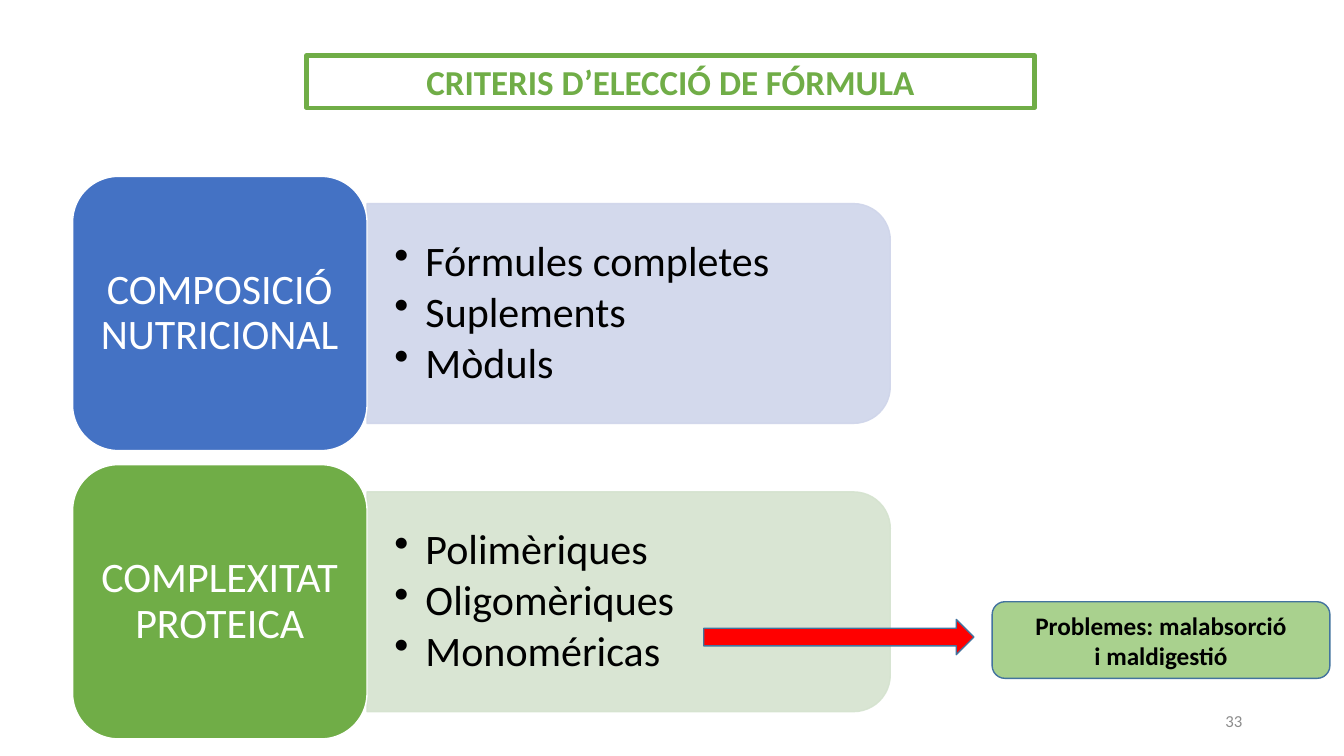
import dataclasses

import lxml.etree
import pptx
import pptx.dml.color
import pptx.enum.shapes
import pptx.enum.text
import pptx.oxml.ns
import pptx.util

Inches = pptx.util.Inches
Pt = pptx.util.Pt
SHAPES = pptx.enum.shapes.MSO_SHAPE
ALIGN = pptx.enum.text.PP_ALIGN
ANCHOR = pptx.enum.text.MSO_ANCHOR


@dataclasses.dataclass(frozen=True)
class Theme:
    font: str = "Calibri"
    blue: str = "4472C4"
    pale_blue: str = "CFD5EA"
    green: str = "70AD47"
    pale_green: str = "D5E3CF"
    callout: str = "A9D18E"
    red: str = "FF0000"
    outline: str = "43739E"
    white: str = "FFFFFF"
    black: str = "000000"
    grey: str = "8C8C8C"
    title_size: int = 25
    body_size: int = 30
    callout_size: int = 18
    number_size: int = 12


THEME = Theme()


def rgb(value):
    return pptx.dml.color.RGBColor.from_string(value)


def apply_format(target, values):
    for name, value in values.items():
        setattr(target, name, value)


def write_text(shape, lines, size, color, bold=False, inset=(0.1, 0.05),
               anchor=ANCHOR.MIDDLE, **para_format):
    frame = shape.text_frame
    side, end = (Inches(value) for value in inset)
    apply_format(frame, {
        "word_wrap": True, "auto_size": pptx.enum.text.MSO_AUTO_SIZE.NONE,
        "vertical_anchor": anchor, "margin_left": side, "margin_right": side,
        "margin_top": end, "margin_bottom": end})
    frame.text = "\n".join(lines)
    for para in frame.paragraphs:
        apply_format(para, para_format)
        for span in para.runs:
            apply_format(span.font, {"name": THEME.font, "size": Pt(size), "bold": bold})
            span.font.color.rgb = rgb(color)


def add_box(page, kind, box, fill, line):
    shape = page.shapes.add_shape(kind, *(Inches(value) for value in box))
    shape.shadow.inherit = False
    shape.fill.solid()
    shape.fill.fore_color.rgb = rgb(fill)
    shape.line.color.rgb = rgb(line)
    shape.line.width = Pt(1)
    return shape


def add_text_box(page, box):
    return page.shapes.add_textbox(*(Inches(value) for value in box))


def set_opacity(shape, percent):
    for color in shape.element.spPr.iter(pptx.oxml.ns.qn("a:srgbClr")):
        alpha = lxml.etree.SubElement(color, pptx.oxml.ns.qn("a:alpha"))
        alpha.set("val", str(percent * 1000))


def add_bullets(shape, indent):
    for para in shape.text_frame.paragraphs:
        properties = para._p.get_or_add_pPr()
        properties.set("marL", str(Inches(indent)))
        properties.set("indent", str(-Inches(indent)))
        bullet = lxml.etree.SubElement(properties, pptx.oxml.ns.qn("a:buChar"))
        bullet.set("char", "•")


def build_title(page, box, text):
    title = page.shapes.title
    edges = zip(("left", "top", "width", "height"), box)
    apply_format(title, {name: Inches(value) for name, value in edges})
    title.line.color.rgb = rgb(THEME.green)
    title.line.width = Pt(3)
    write_text(title, [text], THEME.title_size, THEME.green, bold=True,
               alignment=ALIGN.CENTER)


def build_criterion(page, box, heading, items, strong, pale):
    left, top, width, height = box
    tile_width, panel_height = 2.92, 2.18
    panel_left, panel_width = left + tile_width, width - tile_width
    middle = top + height / 2

    # Panel, turned so that its rounded corners face right
    panel = add_box(page, SHAPES.ROUND_2_SAME_RECTANGLE,
                    (panel_left + (panel_width - panel_height) / 2,
                     middle - panel_width / 2, panel_height, panel_width), pale, pale)
    panel.rotation = 90
    set_opacity(panel, 90)

    # Bulleted items
    listing = add_text_box(page, (panel_left, middle - 0.99, panel_width - 0.1, 1.98))
    write_text(listing, items, THEME.body_size, THEME.black, inset=(0.27, 0.14),
               line_spacing=0.9, space_after=Pt(4))
    add_bullets(listing, 0.31)

    # Heading tile
    tile = add_box(page, SHAPES.ROUNDED_RECTANGLE, (left, top, tile_width, height),
                   strong, THEME.white)
    write_text(tile, [heading], THEME.body_size, THEME.white, inset=(0.12, 0.06),
               alignment=ALIGN.CENTER, line_spacing=0.9)


def build_callout(page, box, text):
    left, top, width, height = box
    arrow_width, arrow_height = 2.68, 0.35
    add_box(page, SHAPES.RIGHT_ARROW,
            (left - 0.18 - arrow_width, top + (height - arrow_height) / 2 - 0.03,
             arrow_width, arrow_height), THEME.red, THEME.outline)
    label = add_box(page, SHAPES.ROUNDED_RECTANGLE, box, THEME.callout, THEME.outline)
    write_text(label, [text], THEME.callout_size, THEME.black, bold=True,
               alignment=ALIGN.CENTER)


def build_page_number(page, box, number):
    write_text(add_text_box(page, box), [number], THEME.number_size, THEME.grey,
               alignment=ALIGN.RIGHT)


def main():
    deck = pptx.Presentation()
    deck.slide_width, deck.slide_height = Inches(13.33), Inches(7.5)
    page = deck.slides.add_slide(deck.slide_layouts.get_by_name("Title Only"))

    build_title(page, (3.04, 0.55, 7.22, 0.52), "CRITERIS D’ELECCIÓ DE FÓRMULA")

    criteria = [
        ("COMPOSICIÓ NUTRICIONAL", ["Fórmules completes", "Suplements", "Mòduls"],
         THEME.blue, THEME.pale_blue),
        ("COMPLEXITAT PROTEICA", ["Polimèriques", "Oligomèriques", "Monoméricas"],
         THEME.green, THEME.pale_green),
    ]
    for row, criterion in enumerate(criteria):
        build_criterion(page, (0.72, 1.75 + row * 2.86, 8.11, 2.72), *criterion)

    build_callout(page, (9.84, 5.97, 3.35, 0.76), "Problemes: malabsorció\vi maldigestió")
    build_page_number(page, (9.42, 6.95, 3, 0.4), "33")
    deck.save("out.pptx")


if __name__ == "__main__":
    main()
